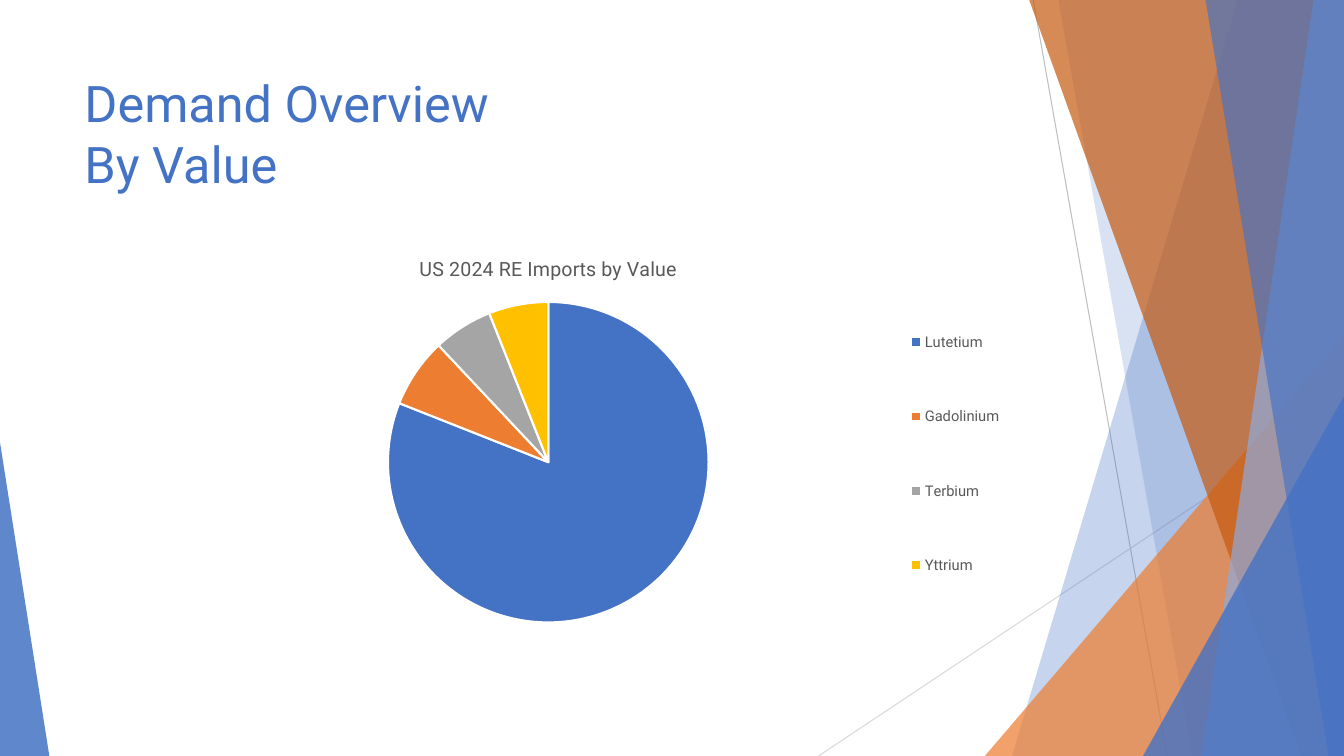
import pptx
import pptx.chart.data
import pptx.dml.color
import pptx.enum.chart
import pptx.enum.shapes
import pptx.oxml
import pptx.oxml.ns
import pptx.util

BLUE, ORANGE, GREY, YELLOW = "4472C4", "ED7D31", "A5A5A5", "FFC000"
FONT, TEXT_GREY = "Roboto", "595959"
qn = pptx.oxml.ns.qn


def paint(fill, color, opacity=100):
    """Make a shape, line or font fill solid, with opacity in percent."""
    fill.solid()
    fill.fore_color.rgb = pptx.dml.color.RGBColor.from_string(color)
    if opacity < 100:
        clr = fill._xPr.find(".//" + qn("a:srgbClr"))
        alpha = clr.makeelement(qn("a:alpha"), {"val": str(opacity * 1000)})
        clr.append(alpha)


def write(tf, text, size, color):
    p = tf.paragraphs[0]
    p.text = text
    for r in p.runs:
        r.font.name = FONT
        r.font.size = pptx.util.Pt(size)
        r.font.bold = False
        paint(r.font.fill, color)


prs = pptx.Presentation()
prs.slide_width = pptx.util.Inches(13.33)
prs.slide_height = pptx.util.Inches(7.5)
s = prs.slides.add_slide(prs.slide_layouts[6])

# All positions are percentages of the slide's width and height
col, row = prs.slide_width / 100, prs.slide_height / 100

# Thin lines behind the facets
for x1, y1, x2, y2, color in [(76.88, 0, 86.85, 100, "BFBFBF"),
                              (100, 53.73, 60.9, 100, "D9D9D9")]:
    line = s.shapes.add_connector(
        pptx.enum.shapes.MSO_CONNECTOR.STRAIGHT,
        int(x1 * col), int(y1 * row), int(x2 * col), int(y2 * row))
    paint(line.line.fill, color)
    line.line.width = pptx.util.Pt(0.75)
    sp_pr = line._element.spPr
    sp_pr.append(sp_pr.makeelement(qn("a:effectLst"), {}))

# Facets: quads (top x, bottom x) reach the right edge at full height;
# triangles (left, top, width, apex) stand on the bottom edge
facets = [
    ("quad", (92.1, 75.3), BLUE, 30),
    ("quad", (78.75, 88.73), BLUE, 20),
    ("triangle", (73.28, 44.4, 26.72, 1), ORANGE, 72),
    ("quad", (76.58, 96.83), "C55A11", 70),
    ("quad", (97.73, 89.4), "8FAADC", 70),
    ("quad", (89.7, 98.85), BLUE, 65),
    ("triangle", (85.05, 52.4, 14.95, 1), BLUE, 80),
    ("triangle", (0, 58.53, 3.67, 0), BLUE, 85),
]
for kind, size, color, opacity in facets:
    if kind == "quad":
        top_x, bottom_x = size
        fb = s.shapes.build_freeform(int(top_x * col), 0)
        fb.add_line_segments([(int(x * col), int(y * row)) for x, y in
                              [(100, 0), (100, 100), (bottom_x, 100)]])
        sp = fb.convert_to_shape()
    else:
        left, top, width, apex = size
        sp = s.shapes.add_shape(
            pptx.enum.shapes.MSO_SHAPE.ISOSCELES_TRIANGLE,
            int(left * col), int(top * row),
            int(width * col), int((100 - top) * row))
        sp.adjustments[0] = apex
    sp.shadow.inherit = False
    sp.line.fill.background()
    paint(sp.fill, color, opacity)

# Title
left, width = int(5.55 * col), int(70.5 * col)
tf = s.shapes.add_textbox(left, int(8.93 * row), width, int(19.2 * row)).text_frame
tf.word_wrap = True
write(tf, "Demand Overview\vBy Value", 36, BLUE)

# Pie chart
data = pptx.chart.data.CategoryChartData()
data.categories = ["Lutetium", "Gadolinium", "Terbium", "Yttrium"]
data.add_series("Series 1", [81, 7, 6, 6])
chart = s.shapes.add_chart(
    pptx.enum.chart.XL_CHART_TYPE.PIE,
    left, int(31.47 * row), width, int(56.53 * row), data).chart
chart.font.name = FONT
chart.font.size = pptx.util.Pt(10)
chart.has_title = True
write(chart.chart_title.text_frame, "US 2024 RE Imports by Value", 14, TEXT_GREY)

for i, color in enumerate([BLUE, ORANGE, GREY, YELLOW]):
    fmt = chart.plots[0].series[0].points[i].format
    paint(fmt.fill, color)
    paint(fmt.line.fill, "FFFFFF")
    fmt.line.width = pptx.util.Pt(1.5)

chart.has_legend = True
legend = chart.legend
legend.position = pptx.enum.chart.XL_LEGEND_POSITION.RIGHT
legend.include_in_layout = False
legend.font.name = FONT
legend.font.size = pptx.util.Pt(10.5)
paint(legend.font.fill, TEXT_GREY)

# Place the pie and its legend as shares of the chart frame
plot_area = chart._chartSpace.chart.plotArea
for parent, index, inner, box in [
        (plot_area, 0, True, (0.33, 0.15, 0.34, 0.75)),
        (legend._element, 1, False, (0.87, 0.09, 0.12, 0.83))]:
    for old in parent.findall(qn("c:layout")):
        parent.remove(old)
    tags = [("layoutTarget", "inner")] if inner else []
    tags += [("xMode", "edge"), ("yMode", "edge"), *zip("xywh", box)]
    items = "".join(f'<c:{tag} val="{val}"/>' for tag, val in tags)
    parent.insert(index, pptx.oxml.parse_xml(
        f'<c:layout {pptx.oxml.ns.nsdecls("c")}>'
        f'<c:manualLayout>{items}</c:manualLayout></c:layout>'))

prs.save("out.pptx")
